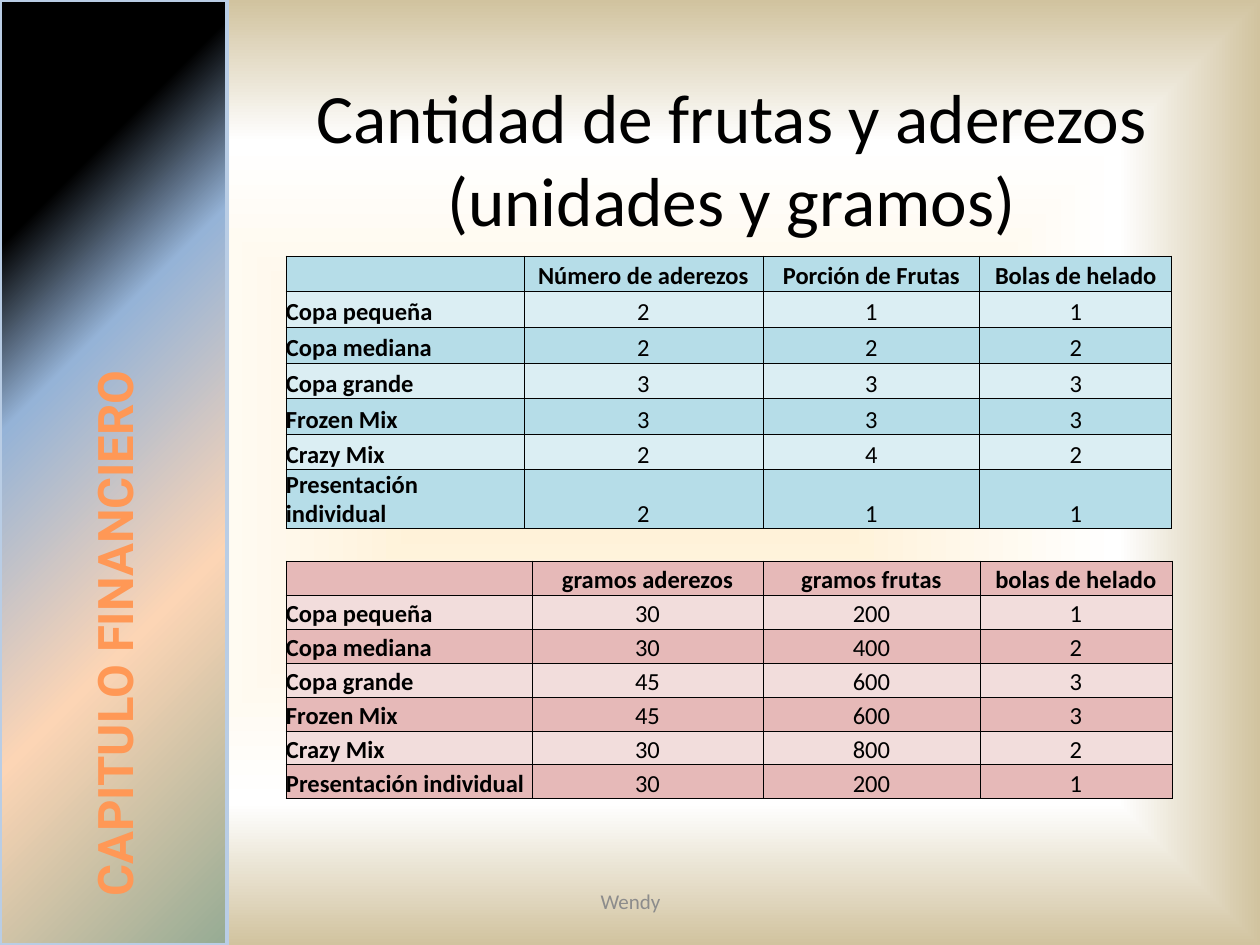
from lxml import etree
from pptx import Presentation
from pptx.dml.color import RGBColor
from pptx.enum.shapes import MSO_SHAPE
from pptx.enum.text import MSO_ANCHOR, MSO_AUTO_SIZE, PP_ALIGN
from pptx.oxml import parse_xml
from pptx.oxml.ns import nsdecls, qn
from pptx.util import Emu, Pt

BLACK = RGBColor(0x00, 0x00, 0x00)
GREY = RGBColor(0x8C, 0x8C, 0x8C)
ORANGE = RGBColor(0xFF, 0x98, 0x56)
PALE_BLUE = RGBColor(0xB9, 0xCD, 0xE5)
BLUE_BANDS = RGBColor(0xB6, 0xDD, 0xE8), RGBColor(0xDB, 0xEE, 0xF3)
PINK_BANDS = RGBColor(0xE6, 0xB9, 0xB8), RGBColor(0xF2, 0xDD, 0xDC)
CREAM = RGBColor(0xFF, 0xEF, 0xD1)
WHITE = RGBColor(0xFF, 0xFF, 0xFF)
SAND = RGBColor(0xD1, 0xC3, 0x9F)
SKY = RGBColor(0x95, 0xB3, 0xD7)
PEACH = RGBColor(0xFC, 0xD5, 0xB5)
SAGE = RGBColor(0x96, 0xAB, 0x94)

PAGE_STOPS = [(0, CREAM), (70, WHITE), (100, SAND)]
SIDEBAR_STOPS = [(21, BLACK), (37, SKY), (66, PEACH), (100, SAGE)]
CENTRE_PATH = '<a:path path="shape"><a:fillToRect l="50000" t="50000" r="50000" b="50000"/></a:path>'
DIAGONAL = '<a:lin ang="2700000" scaled="0"/>'

PRODUCTS = ["Copa pequeña", "Copa mediana", "Copa grande",
            "Frozen Mix", "Crazy Mix", "Presentación individual"]
UNIT_HEADS = ["", "Número de aderezos", "Porción de Frutas", "Bolas de helado"]
UNITS = [(2, 1, 1), (2, 2, 2), (3, 3, 3), (3, 3, 3), (2, 4, 2), (2, 1, 1)]
GRAM_HEADS = ["", "gramos aderezos", "gramos frutas", "bolas de helado"]
GRAMS = [(30, 200, 1), (30, 400, 2), (45, 600, 3),
         (45, 600, 3), (30, 800, 2), (30, 200, 1)]


def px(length):
    """Turn pixels into EMU."""
    return Emu(round(length * 914400 / 126))


def write(frame, text, size, color=BLACK, font="Calibri", bold=False, align=PP_ALIGN.LEFT):
    """Put one formatted paragraph into a text frame."""
    para = frame.paragraphs[0]
    para.alignment = align
    if not text:
        etree.SubElement(para._p, qn("a:endParaRPr"), sz=str(size * 100))
        return para
    span = para.add_run()
    span.text = text
    span.font.size = Pt(size)
    span.font.name = font
    span.font.bold = bold
    span.font.color.rgb = color
    return para


def set_gradient(fill, owner, stops, direction):
    """Give the owner of a fill a gradient with the given stops."""
    fill.solid()
    solid = owner.find(qn("a:solidFill"))
    marks = "".join(f'<a:gs pos="{place * 1000}"><a:srgbClr val="{color}"/></a:gs>'
                    for place, color in stops)
    gradient = parse_xml(f'<a:gradFill {nsdecls("a")} rotWithShape="1">'
                         f'<a:gsLst>{marks}</a:gsLst>{direction}</a:gradFill>')
    owner.replace(solid, gradient)


def paint_background(page):
    """Fill the page from a cream centre to sand edges."""
    fill = page.background.fill
    fill.solid()
    owner = page.element.find(".//" + qn("p:bgPr"))
    set_gradient(fill, owner, PAGE_STOPS, CENTRE_PATH)


def place_title(page, left, top, width, height):
    """Place the slide title."""
    title = page.shapes.title
    title.left, title.top, title.width, title.height = map(px, (left, top, width, height))
    frame = title.text_frame
    frame.word_wrap = True
    frame.auto_size = MSO_AUTO_SIZE.NONE
    frame.vertical_anchor = MSO_ANCHOR.BOTTOM
    write(frame, "Cantidad de frutas y aderezos (unidades y gramos)", 39.6, align=PP_ALIGN.CENTER)


def add_footer(page, left, top, width, height):
    """Add the author's name at the foot."""
    box = page.shapes.add_textbox(*map(px, (left, top, width, height)))
    frame = box.text_frame
    frame.word_wrap = True
    frame.vertical_anchor = MSO_ANCHOR.MIDDLE
    write(frame, "Wendy", 12, color=GREY, align=PP_ALIGN.CENTER)


def add_sidebar(page, left, top, width, height):
    """Add the chapter band with its upward text."""
    band = page.shapes.add_shape(MSO_SHAPE.RECTANGLE, *map(px, (left, top, width, height)))
    band.shadow.inherit = False
    set_gradient(band.fill, band.element.spPr, SIDEBAR_STOPS, DIAGONAL)
    band.line.color.rgb = PALE_BLUE
    band.line.width = Pt(2)
    frame = band.text_frame
    frame.word_wrap = True
    frame.vertical_anchor = MSO_ANCHOR.MIDDLE
    frame._txBody.bodyPr.set("vert", "vert270")
    para = write(frame, "CAPITULO FINANCIERO", 28, color=ORANGE, font="Roboto", bold=True)
    para._p.get_or_add_pPr().set("marL", str(px(36)))


def format_cell(cell, color):
    """Give a cell thin black borders, no margins and a fill."""
    properties = cell._tc.get_or_add_tcPr()
    for side in "LRTB":
        properties.append(parse_xml(
            f'<a:ln{side} {nsdecls("a")} w="6350"><a:solidFill>'
            f'<a:srgbClr val="{BLACK}"/></a:solidFill></a:ln{side}>'))
    cell.fill.solid()
    cell.fill.fore_color.rgb = color
    cell.margin_left = cell.margin_right = cell.margin_top = cell.margin_bottom = 0
    cell.vertical_anchor = MSO_ANCHOR.BOTTOM


def add_quantities(page, left, top, widths, heights, heads, values, bands):
    """Add a banded table of quantities per product."""
    rows = [heads] + [(name, *numbers) for name, numbers in zip(PRODUCTS, values)]
    table = page.shapes.add_table(len(rows), len(heads), px(left), px(top),
                                  px(sum(widths)), px(sum(heights))).table
    table.first_row = table.horz_banding = False
    for column, width in zip(table.columns, widths):
        column.width = px(width)
    for i, row in enumerate(rows):
        table.rows[i].height = px(heights[i])
        for j, value in enumerate(row):
            cell = table.cell(i, j)
            format_cell(cell, bands[i % 2])
            write(cell.text_frame, str(value), 14, bold=i == 0 or j == 0,
                  align=PP_ALIGN.CENTER if j else PP_ALIGN.LEFT)


def main():
    """Build and save the slide."""
    deck = Presentation()
    deck.slide_width, deck.slide_height = px(1260), px(945)
    page = deck.slides.add_slide(deck.slide_layouts[5])
    paint_background(page)
    place_title(page, 266, 38, 931, 209)
    add_footer(page, 431, 876, 399, 50)
    add_sidebar(page, 0, 0, 227, 945)
    add_quantities(page, 286, 256, [238, 239, 217, 192], [35, 36, 36, 36, 36, 35, 32],
                   UNIT_HEADS, UNITS, BLUE_BANDS)
    add_quantities(page, 286, 561, [246, 231, 217, 192], [34] * 7,
                   GRAM_HEADS, GRAMS, PINK_BANDS)
    deck.save("out.pptx")


if __name__ == "__main__":
    main()
